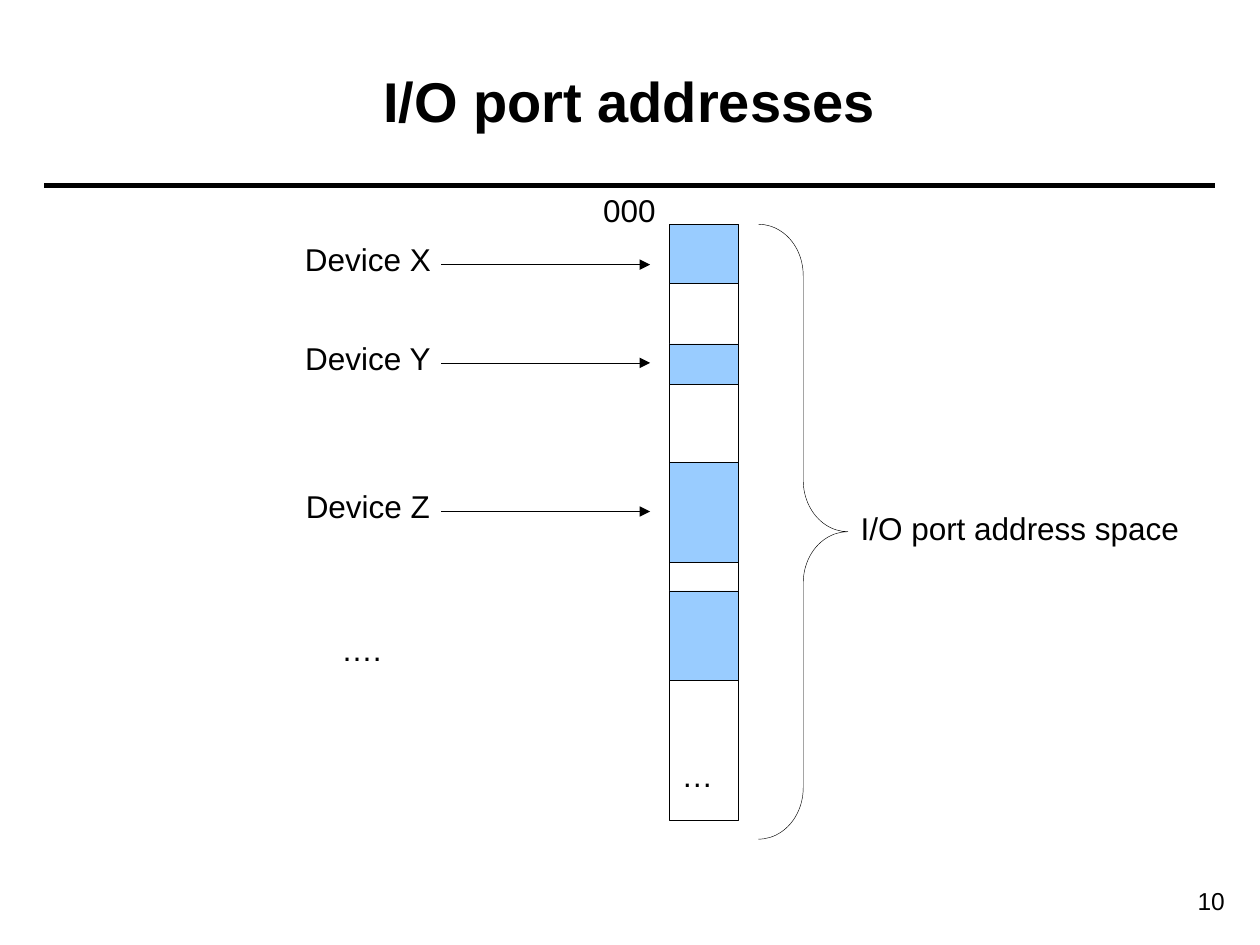
from lxml import etree
from pptx import Presentation
from pptx.dml.color import RGBColor
from pptx.enum.shapes import MSO_CONNECTOR, MSO_SHAPE
from pptx.enum.text import MSO_ANCHOR, MSO_AUTO_SIZE, PP_ALIGN
from pptx.oxml.ns import qn
from pptx.util import Inches, Pt

COLORS = {"ink": "000000", "port": "99CCFF"}
HAIRLINE = 0.25
LABEL_HEIGHT = 0.4
SPACE_LEFT, SPACE_TOP, SPACE_WIDTH, SPACE_HEIGHT = 5.31, 1.78, 0.55, 4.73
ARROW_START, ARROW_END = 3.5, 5.16
ARROW_DROP = 0.24  # from the top of a device label to its arrow


class SlideBuilder:
    def __init__(self, slide, font="Arial"):
        self.shapes = slide.shapes
        self.font = font

    def color(self, name):
        return RGBColor.from_string(COLORS[name])

    def stroke(self, line, width):
        line.color.rgb = self.color("ink")
        line.width = Pt(width)

    def text(self, wording, left, top, width, height=LABEL_HEIGHT, size=18,
             bold=False, align=PP_ALIGN.CENTER, wrap=False, anchor=MSO_ANCHOR.TOP):
        """Add a text box; without wrapping it grows to fit its one line."""
        box = self.shapes.add_textbox(*map(Inches, (left, top, width, height)))
        frame = box.text_frame
        frame.word_wrap = wrap
        frame.auto_size = MSO_AUTO_SIZE.NONE if wrap else MSO_AUTO_SIZE.SHAPE_TO_FIT_TEXT
        frame.vertical_anchor = anchor
        paragraph = frame.paragraphs[0]
        paragraph.alignment = align
        run = paragraph.add_run()
        run.text = wording
        run.font.color.rgb = self.color("ink")
        formats = {"name": self.font, "size": Pt(size), "bold": bold}
        for attribute, value in formats.items():
            setattr(run.font, attribute, value)

    def shape(self, kind, left, top, width, height, fill=None, adjustments=()):
        shape = self.shapes.add_shape(kind, *map(Inches, (left, top, width, height)))
        shape.shadow.inherit = False
        if fill:
            shape.fill.solid()
            shape.fill.fore_color.rgb = self.color(fill)
        else:
            shape.fill.background()
        self.stroke(shape.line, HAIRLINE)
        for index, value in enumerate(adjustments):
            shape.adjustments[index] = value

    def horizontal_line(self, start, end, y, width=HAIRLINE, arrow=False):
        line = self.shapes.add_connector(
            MSO_CONNECTOR.STRAIGHT, *map(Inches, (start, y, end, y)))
        self.stroke(line.line, width)
        properties = line._element.spPr
        etree.SubElement(properties, qn("a:effectLst"))
        if arrow:
            etree.SubElement(properties.find(qn("a:ln")), qn("a:tailEnd"), type="triangle")


def main():
    prs = Presentation()
    prs.slide_width, prs.slide_height = Inches(10), Inches(7.5)
    builder = SlideBuilder(prs.slides.add_slide(prs.slide_layouts[6]))

    builder.horizontal_line(0.35, 9.64, 1.47, width=3)
    builder.text("10", 8.78, 6.98, 1.04, 0.34, size=14, align=PP_ALIGN.RIGHT, wrap=True)
    builder.text("I/O port addresses", 0.35, 0.17, 9.29, 1.25, size=32, bold=True,
                 wrap=True, anchor=MSO_ANCHOR.MIDDLE)

    builder.shape(MSO_SHAPE.RECTANGLE, SPACE_LEFT, SPACE_TOP, SPACE_WIDTH, SPACE_HEIGHT)
    port_ranges = [(SPACE_TOP, 0.47), (2.73, 0.32), (3.67, 0.79), (4.69, 0.71)]
    for top, height in port_ranges:
        builder.shape(MSO_SHAPE.RECTANGLE, SPACE_LEFT, top, SPACE_WIDTH, height, fill="port")
    builder.shape(MSO_SHAPE.RIGHT_BRACE, 6.02, SPACE_TOP, 0.71, 4.88,
                  adjustments=(0.574, 0.5))

    builder.text("I/O port address space", 6.73, 3.99, 2.73)
    builder.text("000", 4.67, 1.47, 0.65)
    builder.text("…", SPACE_LEFT, 5.95, 0.45)

    for device, top in [("X", 1.86), ("Y", 2.64), ("Z", 3.82)]:
        builder.horizontal_line(ARROW_START, ARROW_END, top + ARROW_DROP, arrow=True)
        builder.text(f"Device {device}", 2.32, top, 1.2)
    builder.text("….", 2.61, 4.95, 0.52)

    prs.save("out.pptx")


if __name__ == "__main__":
    main()
